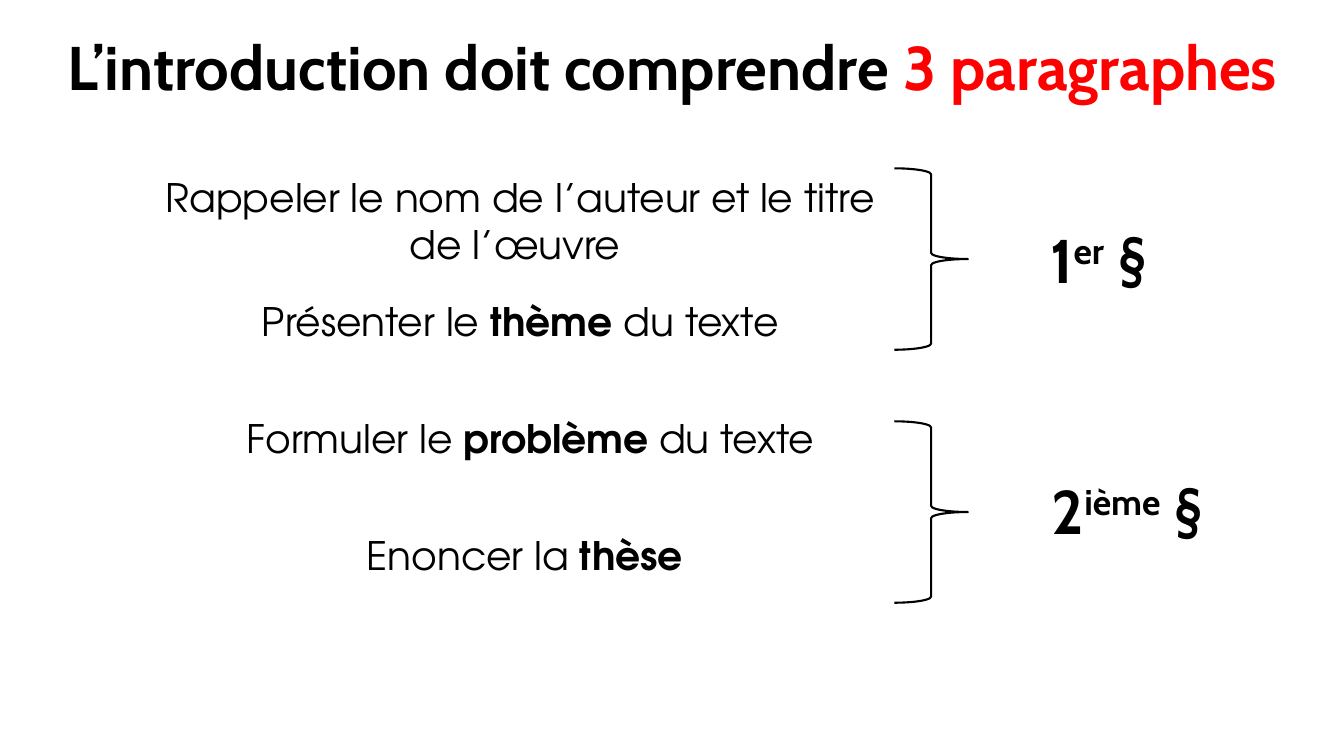
import pptx
import pptx.dml.color
import pptx.enum.shapes
import pptx.enum.text
import pptx.util

BLACK = pptx.dml.color.RGBColor(0x00, 0x00, 0x00)
RED = pptx.dml.color.RGBColor(0xFF, 0x00, 0x00)

HEADING_FORMAT = {"font": "Cabin", "size": 44, "bold": True}
STATEMENT_FORMAT = {"font": "TeX Gyre Adventor", "size": 28}


def add_text(paragraph, text, font, size, bold=False, color=BLACK, superscript=False):
    """Append one formatted run to a paragraph."""
    run = paragraph.add_run()
    run.text = text
    run.font.name = font
    run.font.size = pptx.util.Pt(size)
    run.font.bold = bold
    run.font.color.rgb = color
    if superscript:
        run.font._element.set("baseline", "30000")


class IntroductionSlide:
    """Places elements by percentages of the slide's width and height."""

    def __init__(self, presentation):
        self.width = presentation.slide_width
        self.height = presentation.slide_height
        self.slide = presentation.slides.add_slide(presentation.slide_layouts[6])

    def area(self, left, top, width, height):
        return (int(self.width * left / 100), int(self.height * top / 100),
                int(self.width * width / 100), int(self.height * height / 100))

    def text_box(self, area, parts, style):
        """Each part is a text with the format that differs from the style."""
        frame = self.slide.shapes.add_textbox(*self.area(*area)).text_frame
        frame.word_wrap = True
        frame.auto_size = pptx.enum.text.MSO_AUTO_SIZE.SHAPE_TO_FIT_TEXT
        paragraph = frame.paragraphs[0]
        paragraph.alignment = pptx.enum.text.PP_ALIGN.CENTER
        for text, changes in parts:
            add_text(paragraph, text, **{**style, **changes})

    def title(self, start, highlight):
        self.text_box((1.8, 3.2, 96.45, 11.2),
                      [(start, {}), (highlight, {"color": RED})], HEADING_FORMAT)

    def statement(self, left, top, height, start, keyword="", end=""):
        parts = [(start, {}), (keyword, {"bold": True}), (end, {})]
        self.text_box((left, top, 58.36, height),
                      [part for part in parts if part[0]], STATEMENT_FORMAT)

    def brace(self, top):
        shape = self.slide.shapes.add_shape(
            pptx.enum.shapes.MSO_SHAPE.RIGHT_BRACE, *self.area(66.54, top, 5.48, 24))
        shape.shadow.inherit = False
        shape.fill.background()
        shape.line.color.rgb = BLACK
        shape.line.width = pptx.util.Pt(1.5)

    def ordinal(self, top, width, number, suffix):
        self.text_box((76, top, width, 11.2),
                      [(number, {}), (suffix, {"superscript": True}), (" §", {})],
                      HEADING_FORMAT)


def main():
    presentation = pptx.Presentation()
    presentation.slide_width = pptx.util.Inches(13.33)
    presentation.slide_height = pptx.util.Inches(7.5)
    page = IntroductionSlide(presentation)

    page.title("L’introduction doit comprendre ", "3 paragraphes")

    # First paragraph: author, title and theme
    page.statement(9.53, 22.27, 13.87,
                   "Rappeler le nom de l’auteur et le titre de l’œuvre ")
    page.statement(9.53, 38.67, 7.6, "Présenter le ", "thème", " du texte")
    page.brace(22.27)
    page.ordinal(28.67, 11.48, "1", "er")

    # Second paragraph: problem and thesis
    page.statement(10.28, 54.13, 7.6, "Formuler le ", "problème", " du texte")
    page.statement(10.28, 69.6, 7.6, "Enoncer la ", "thèse ")
    page.brace(55.73)
    page.ordinal(61.87, 15.75, "2", "ième")

    presentation.save("out.pptx")


if __name__ == "__main__":
    main()
